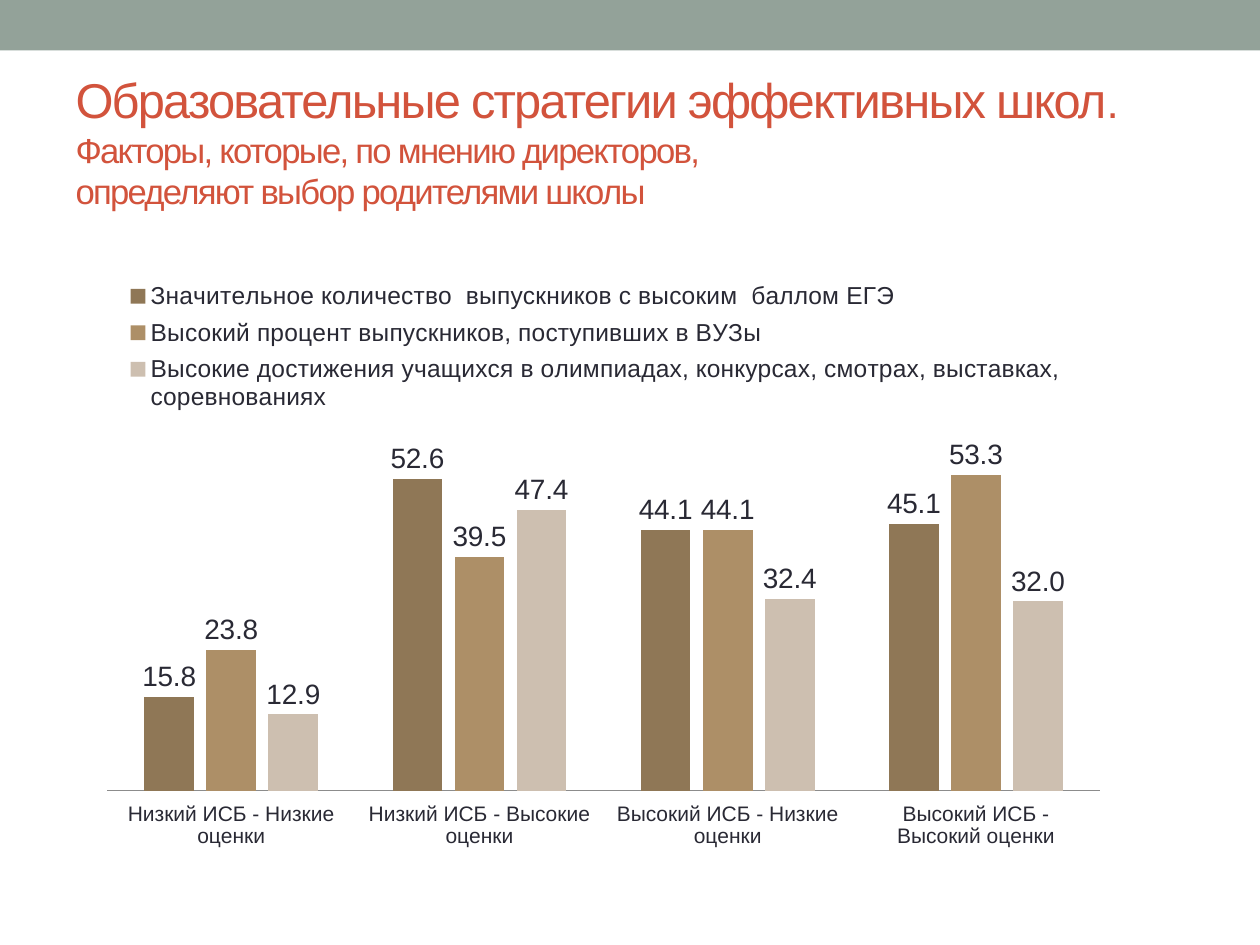
from lxml.etree import SubElement
from pptx import Presentation
from pptx.chart.data import CategoryChartData
from pptx.dml.color import RGBColor
from pptx.enum.chart import XL_CHART_TYPE as CT, XL_LABEL_POSITION as LP
from pptx.enum.chart import XL_LEGEND_POSITION as LEG, XL_TICK_LABEL_POSITION as TLP
from pptx.enum.chart import XL_TICK_MARK as TM
from pptx.enum.shapes import MSO_SHAPE
from pptx.enum.text import MSO_ANCHOR, MSO_AUTO_SIZE, PP_ALIGN
from pptx.oxml.ns import qn
from pptx.util import Cm, Pt

FONT = "Arial"
DARK = "292934"
TITLE = [
    ("Образовательные стратегии эффективных школ", 27.9),
    (".\n", 25.2),
    ("Факторы, которые, по мнению директоров,\nопределяют выбор родителями школы", 19.8),
]
CATEGORIES = [
    "Низкий ИСБ - Низкие оценки",
    "Низкий ИСБ - Высокие оценки",
    "Высокий ИСБ - Низкие оценки",
    "Высокий ИСБ - Высокий оценки",
]
SERIES = [
    ("Значительное количество  выпускников с высоким  баллом ЕГЭ ",
     (15.8, 52.6, 44.1, 45.1), "8F7756"),
    ("Высокий процент выпускников, поступивших в ВУЗы",
     (23.8, 39.5, 44.1, 53.3), "AD8F67"),
    ("Высокие достижения учащихся в олимпиадах, конкурсах, смотрах, выставках, соревнованиях",
     (12.9, 47.4, 32.4, 32.0), "CDBFB0"),
]


def rgb(value):
    return RGBColor.from_string(value)


def set_font(font, size, color=DARK):
    font.name, font.size, font.color.rgb = FONT, Pt(size), rgb(color)


def add_text(p, text, size, color=DARK, spacing=0):
    for i, line in enumerate(text.split("\n")):
        if i:
            p.add_line_break()
        if line:
            r = p.add_run()
            r.text = line
            set_font(r.font, size, color)
            r.font._element.set("spc", str(spacing * 100))


def set_layout(parent, after, x, y, w, h, inner=False):
    for old in parent.findall(qn("c:layout")):
        parent.remove(old)
    layout = SubElement(parent, qn("c:layout"))
    manual = SubElement(layout, qn("c:manualLayout"))
    values = [("layoutTarget", "inner")] if inner else []
    values += [("xMode", "edge"), ("yMode", "edge"), ("x", x), ("y", y), ("w", w), ("h", h)]
    for tag, value in values:
        SubElement(manual, qn("c:" + tag)).set("val", str(value))
    if after is None:
        parent.insert(0, layout)
    else:
        after.addnext(layout)


prs = Presentation()
prs.slide_width, prs.slide_height = Cm(25.4), Cm(19.05)
s = prs.slides.add_slide(prs.slide_layouts[5])

band = s.shapes.add_shape(MSO_SHAPE.RECTANGLE, 0, 0, prs.slide_width, Cm(1.02))
band.shadow.inherit = False
band.fill.solid()
band.fill.fore_color.rgb = rgb("93A299")
band.line.fill.background()

title = s.shapes.title
title.left, title.top, title.width, title.height = Cm(1.27), Cm(1.47), Cm(22.86), Cm(2.74)
tf = title.text_frame
tf.word_wrap, tf.auto_size, tf.vertical_anchor = True, MSO_AUTO_SIZE.NONE, MSO_ANCHOR.MIDDLE
p = tf.paragraphs[0]
p.alignment = PP_ALIGN.LEFT
for text, size in TITLE:
    add_text(p, text, size, color="D2533C", spacing=-1)

data = CategoryChartData(number_format="###0.0")
data.categories = CATEGORIES
for name, values, _ in SERIES:
    data.add_series(name, values)
chart = s.shapes.add_chart(
    CT.COLUMN_CLUSTERED, Cm(1.09), Cm(5.13), Cm(21.41), Cm(12.8), data).chart
set_font(chart.font, 10)
chart.has_title = False

chart.has_legend = True
legend = chart.legend
legend.position, legend.include_in_layout = LEG.TOP, False
set_font(legend.font, 14)
set_layout(legend._element, legend._element.find(qn("c:legendPos")), 0.05, 0.03, 0.92, 0.23)
set_layout(chart._chartSpace.chart.plotArea, None, 0.05, 0.285, 0.935, 0.56, inner=True)

axis = chart.category_axis
axis.major_tick_mark = axis.minor_tick_mark = TM.NONE
axis.tick_label_position = TLP.LOW
axis.format.line.color.rgb = rgb("8C8C8C")
set_font(axis.tick_labels.font, 12)
axis = chart.value_axis
axis.visible = axis.has_major_gridlines = False
axis.minimum_scale, axis.maximum_scale = 0, 60

plot = chart.plots[0]
plot.gap_width, plot.overlap, plot.vary_by_categories = 150, -25, False
for series, (_, _, color) in zip(plot.series, SERIES):
    series.format.fill.solid()
    series.format.fill.fore_color.rgb = rgb(color)
    labels = series.data_labels
    labels.show_value, labels.position = True, LP.OUTSIDE_END
    labels.number_format, labels.number_format_is_linked = "###0.0", False
    set_font(labels.font, 16)

prs.save("out.pptx")
